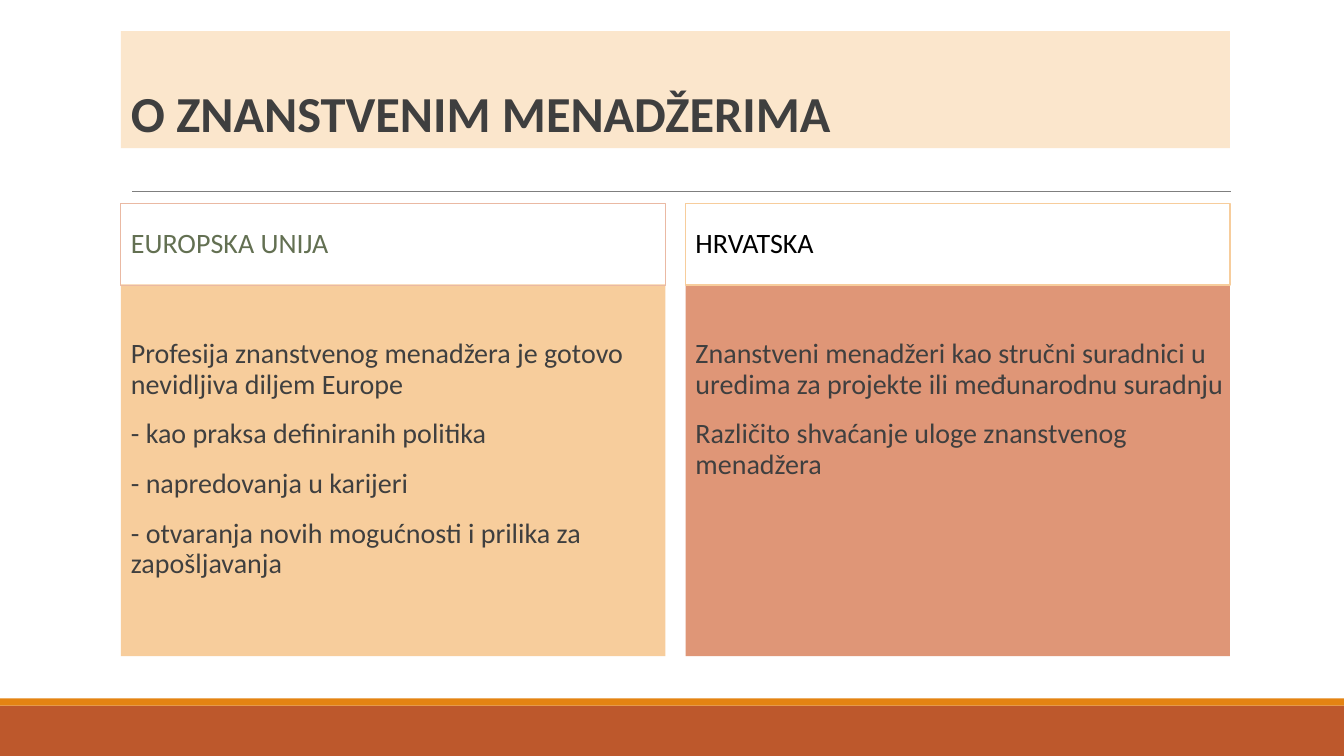
from pptx import Presentation
from pptx.dml.color import RGBColor
from pptx.enum.shapes import MSO_CONNECTOR as Connector, MSO_SHAPE as Shape
from pptx.enum.text import MSO_ANCHOR as Anchor, PP_ALIGN as Align
from pptx.oxml.ns import qn
from pptx.util import Inches, Pt
from lxml.etree import SubElement

# Grid units in inches
COLUMN, ROW = 0.2, 0.1
WIDE, HIGH = 13.33 / COLUMN, 7.5 / ROW


def color(code):
    return RGBColor.from_string(code)


def columns(count):
    return Inches(count * COLUMN)


def rows(count):
    return Inches(count * ROW)


def write(frame, lines, size=20, ink="3F3F3F", bold=False, spacing=0.9,
          after=0, anchor=Anchor.MIDDLE, insets=(0.1, 0.05, 0.1, 0.05)):
    frame.word_wrap = True
    frame.vertical_anchor = anchor
    (frame.margin_left, frame.margin_top,
     frame.margin_right, frame.margin_bottom) = map(Inches, insets)
    for index, line in enumerate(lines):
        para = frame.add_paragraph() if index else frame.paragraphs[0]
        para.alignment = Align.LEFT
        para.line_spacing = spacing
        para.space_before, para.space_after = Pt(0), Pt(after)
        span = para.add_run()
        span.text = line
        span.font.name, span.font.size = "Calibri", Pt(size)
        span.font.bold = bold
        span.font.color.rgb = color(ink)


class SlideBuilder:
    def __init__(self, page):
        self.page = page

    def box(self, left, top, width, height, fill=None, border=None, weight=0.75):
        box = self.page.shapes.add_shape(
            Shape.RECTANGLE, columns(left), rows(top), columns(width), rows(height))
        box.shadow.inherit = False
        if fill:
            box.fill.solid()
            box.fill.fore_color.rgb = color(fill)
        else:
            box.fill.background()
        if border:
            box.line.color.rgb = color(border)
            box.line.width = Pt(weight)
        else:
            box.line.fill.background()
        return box

    def rule(self, left, right, top, ink, weight=0.75):
        line = self.page.shapes.add_connector(
            Connector.STRAIGHT, columns(left), rows(top), columns(right), rows(top))
        line.line.color.rgb = color(ink)
        line.line.width = Pt(weight)
        SubElement(line._element.spPr, qn("a:effectLst"))

    def panel(self, left, heading, heading_style, ink, fill, lines):
        body = self.box(left, 28.2, 27, 36.9, fill)
        write(body.text_frame, lines, after=14, anchor=Anchor.TOP,
              insets=(0.1, 0.55, 0, 0.05))
        head = self.box(left, 20.2, 27, 8.1, **heading_style)
        write(head.text_frame, [heading], ink=ink)


def main():
    deck = Presentation()
    deck.slide_width, deck.slide_height = columns(WIDE), rows(HIGH)
    builder = SlideBuilder(deck.slides.add_slide(deck.slide_layouts[6]))

    # Footer bands and divider
    builder.box(0, 70, WIDE, 5, "BD582C")
    builder.box(0, 69.3, WIDE, 0.7, "E48312")
    builder.rule(6.55, 61.05, 19, "7F7F7F")

    # Title
    title = builder.box(6, 3.1, 55, 11.6, "FBE6CC")
    write(title.text_frame, ["O ZNANSTVENIM MENADŽERIMA"], size=36, bold=True,
          spacing=0.85, anchor=Anchor.BOTTOM)

    # Comparison panels
    builder.panel(
        6, "EUROPSKA UNIJA", {"border": "EAB9A3"}, "637052", "F7CD9C",
        ["Profesija znanstvenog menadžera je gotovo nevidljiva diljem Europe",
         "- kao praksa definiranih politika",
         "- napredovanja u karijeri",
         "- otvaranja novih mogućnosti i prilika za zapošljavanja"])
    builder.panel(
        34, "HRVATSKA", {"fill": "FFFFFF", "border": "F7CD9C", "weight": 1.25},
        "000000", "DF9677",
        ["Znanstveni menadžeri kao stručni suradnici u uredima za projekte "
         "ili međunarodnu suradnju",
         "Različito shvaćanje uloge znanstvenog menadžera"])

    deck.save("out.pptx")


if __name__ == "__main__":
    main()
